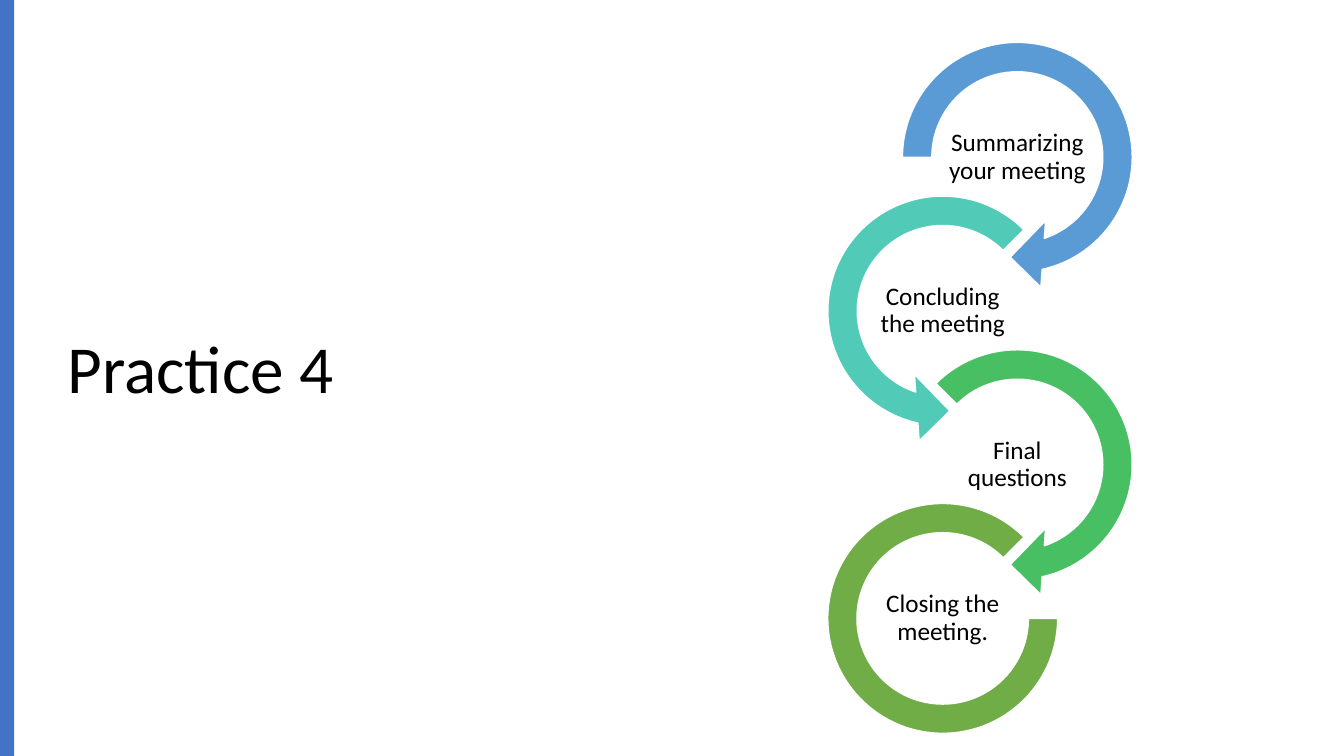
from dataclasses import dataclass

from pptx import Presentation
from pptx.dml.color import RGBColor
from pptx.enum.shapes import MSO_SHAPE
from pptx.enum.text import MSO_ANCHOR, PP_ALIGN
from pptx.util import Inches, Pt


@dataclass(frozen=True)
class Theme:
    font: str = "Calibri"
    text: str = "000000"
    outline: str = "FFFFFF"
    accent: str = "4472C4"
    steps: tuple = ("5B9BD5", "52CAB8", "49BF64", "70AD47")
    title_size: int = 48
    step_size: int = 18
    line_spacing: float = 0.9


THEME = Theme()
SLIDE_W, SLIDE_H = 13.33, 7.5
LEFT_COLUMN, RIGHT_COLUMN = 9.35, 10.09
FIRST_ROW, ROW_STEP = 1.56, 1.525
ARROW_SIZE, ARC_SIZE = 2.65, 2.28
LABEL_W, LABEL_H = 1.48, 0.74
RING = 0.11

STEPS = (
    ("Summarizing your meeting", RIGHT_COLUMN, MSO_SHAPE.CIRCULAR_ARROW,
     ARROW_SIZE, (RING, 11.42, 45, 108, 0.125)),
    ("Concluding the meeting", LEFT_COLUMN, MSO_SHAPE.LEFT_CIRCULAR_ARROW,
     ARROW_SIZE, (RING, 11.42, 63, 189, 0.125)),
    ("Final questions", RIGHT_COLUMN, MSO_SHAPE.CIRCULAR_ARROW,
     ARROW_SIZE, (RING, 11.42, 45, 135, 0.125)),
    ("Closing the meeting.", LEFT_COLUMN, MSO_SHAPE.BLOCK_ARC,
     ARC_SIZE, (0, 189, 0.127)),
)


def centred_box(x, y, width, height):
    return [Inches(v) for v in (x - width / 2, y - height / 2, width, height)]


def add_filled(shapes, preset, box, color):
    figure = shapes.add_shape(preset, *box)
    figure.shadow.inherit = False
    figure.fill.solid()
    figure.fill.fore_color.rgb = RGBColor.from_string(color)
    figure.line.fill.background()
    return figure


def add_label(shapes, wording, box, size, align, inset):
    frame = shapes.add_textbox(*box).text_frame
    frame.word_wrap = True
    frame.vertical_anchor = MSO_ANCHOR.MIDDLE
    frame.margin_left = frame.margin_right = Inches(inset)
    frame.margin_top = frame.margin_bottom = Inches(min(inset, 0.05))
    paragraph = frame.paragraphs[0]
    paragraph.alignment = align
    paragraph.line_spacing = THEME.line_spacing
    run = paragraph.add_run()
    run.text = wording
    run.font.name = THEME.font
    run.font.size = Pt(size)
    run.font.color.rgb = RGBColor.from_string(THEME.text)


def add_step(shapes, row, color, step):
    wording, x, preset, diameter, angles = step
    y = FIRST_ROW + row * ROW_STEP
    ring = add_filled(shapes, preset, centred_box(x, y, diameter, diameter), color)
    ring.line.color.rgb = RGBColor.from_string(THEME.outline)
    ring.line.width = Pt(1)
    for index, angle in enumerate(angles):
        ring.adjustments[index] = angle
    add_label(shapes, wording, centred_box(x, y, LABEL_W, LABEL_H),
              THEME.step_size, PP_ALIGN.CENTER, 0.01)


def main():
    deck = Presentation()
    deck.slide_width, deck.slide_height = Inches(SLIDE_W), Inches(SLIDE_H)
    slide = deck.slides.add_slide(deck.slide_layouts[6])

    title_box = [Inches(v) for v in (0.57, 0.68, 5.67, 6.02)]
    add_label(slide.shapes, "Practice 4", title_box, THEME.title_size,
              PP_ALIGN.LEFT, 0.1)
    side_bar = [Inches(v) for v in (0, 0, 0.14, SLIDE_H)]
    add_filled(slide.shapes, MSO_SHAPE.RECTANGLE, side_bar, THEME.accent)

    chain = slide.shapes.add_group_shape()
    for row, (color, step) in enumerate(zip(THEME.steps, STEPS)):
        add_step(chain.shapes, row, color, step)

    deck.save("out.pptx")


if __name__ == "__main__":
    main()
